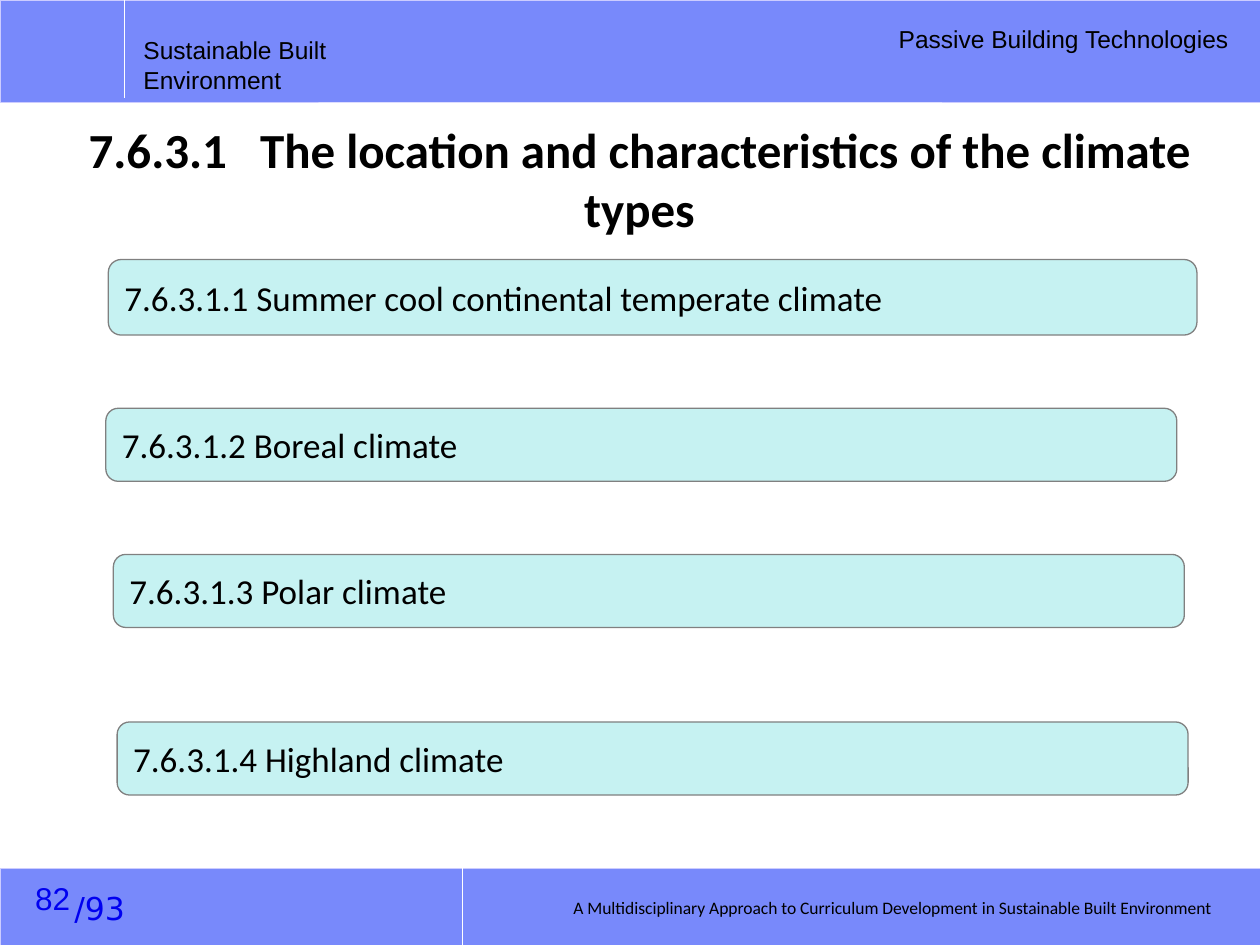
from dataclasses import dataclass

import lxml.etree
import pptx
import pptx.dml.color
import pptx.enum.shapes
import pptx.enum.text
import pptx.oxml.ns
import pptx.shapes.base
import pptx.slide
import pptx.text.text
import pptx.util

Inches = pptx.util.Inches
Pt = pptx.util.Pt
Align = pptx.enum.text.PP_ALIGN
Anchor = pptx.enum.text.MSO_ANCHOR
Preset = pptx.enum.shapes.MSO_SHAPE

COLORS = {
    "band": "7889FB",
    "band_edge": "CCCCFF",
    "divider": "FFFFFF",
    "topic": "C6F2F2",
    "topic_edge": "808080",
    "text": "000000",
    "page": "0000F0",
}


@dataclass(frozen=True)
class Box:
    left: float
    top: float
    width: float
    height: float

    def lengths(self) -> list[int]:
        return [Inches(v) for v in (self.left, self.top, self.width, self.height)]


@dataclass(frozen=True)
class Style:
    size: int
    font: str = "Calibri"
    color: str = "text"
    bold: bool = False
    align: Align = Align.LEFT
    anchor: Anchor = Anchor.TOP
    margin_right: float = 0.1


@dataclass(frozen=True)
class Label:
    words: str
    box: Box
    style: Style


@dataclass(frozen=True)
class Divider:
    x: float
    top: float
    bottom: float


BANDS = [Box(0, 6.89, 10, 0.61), Box(0, 0, 10, 0.81)]
DIVIDERS = [Divider(0.99, 0, 0.78), Divider(3.67, 6.88, 7.5)]
TOPIC_STYLE = Style(20, anchor=Anchor.MIDDLE)
TOPICS = [
    Label("7.6.3.1.1 Summer cool continental temperate climate", Box(0.86, 2.06, 8.64, 0.6), TOPIC_STYLE),
    Label("7.6.3.1.2 Boreal climate", Box(0.84, 3.24, 8.5, 0.58), TOPIC_STYLE),
    Label("7.6.3.1.3 Polar climate", Box(0.9, 4.4, 8.5, 0.58), TOPIC_STYLE),
    Label("7.6.3.1.4 Highland climate", Box(0.93, 5.73, 8.5, 0.58), TOPIC_STYLE),
]
TITLE = Label("7.6.3.1", Box(0.32, 0.9, 9.51, 1.04), Style(28, bold=True, align=Align.CENTER))
TITLE_WORDS = "The location and characteristics of the climate types"
TITLE_GAP = 1260
LABELS = [
    Label("Sustainable Built Environment", Box(1.04, 0.23, 2.79, 0.33), Style(14, "Arial", margin_right=0.8)),
    Label("Passive Building Technologies", Box(7, 0.14, 2.85, 0.43), Style(14, "Arial", align=Align.RIGHT)),
    Label("/93", Box(0.27, 7.01, 0.82, 0.4), Style(18, "DejaVu Sans", "page", align=Align.RIGHT)),
    Label(
        "A Multidisciplinary Approach to Curriculum Development in Sustainable Built Environment",
        Box(3.92, 7.07, 5.79, 0.27),
        Style(10, align=Align.RIGHT, anchor=Anchor.MIDDLE),
    ),
    Label("82", Box(0.18, 6.93, 2.33, 0.4), Style(18, "Arial", "page", anchor=Anchor.MIDDLE)),
]


def rgb(name: str) -> pptx.dml.color.RGBColor:
    return pptx.dml.color.RGBColor.from_string(COLORS[name])


def apply(target: object, values: dict[str, object]) -> None:
    for attribute, value in values.items():
        setattr(target, attribute, value)


def write(holder: pptx.shapes.base.BaseShape, label: Label) -> pptx.text.text._Paragraph:
    style = label.style
    frame = holder.text_frame
    apply(frame, {
        "word_wrap": True,
        "vertical_anchor": style.anchor,
        "margin_right": Inches(style.margin_right),
    })
    paragraph = frame.paragraphs[0]
    paragraph.alignment = style.align
    add_words(paragraph, label.words, style)
    return paragraph


def add_words(paragraph: pptx.text.text._Paragraph, words: str, style: Style) -> pptx.text.text._Run:
    run = paragraph.add_run()
    run.text = words
    apply(run.font, {"size": Pt(style.size), "name": style.font, "bold": style.bold})
    run.font.color.rgb = rgb(style.color)
    return run


def draw_panel(
    slide: pptx.slide.Slide, preset: Preset, box: Box, fill: str, edge: str, weight: float
) -> pptx.shapes.base.BaseShape:
    panel = slide.shapes.add_shape(preset, *box.lengths())
    panel.shadow.inherit = False
    panel.fill.solid()
    panel.fill.fore_color.rgb = rgb(fill)
    panel.line.color.rgb = rgb(edge)
    panel.line.width = Pt(weight)
    return panel


def draw_divider(slide: pptx.slide.Slide, divider: Divider) -> None:
    x = Inches(divider.x)
    rule = slide.shapes.add_connector(
        pptx.enum.shapes.MSO_CONNECTOR.STRAIGHT, x, Inches(divider.top), x, Inches(divider.bottom)
    )
    rule.line.color.rgb = rgb("divider")
    rule.line.width = Pt(0.75)
    lxml.etree.SubElement(rule._element.spPr, pptx.oxml.ns.qn("a:effectLst"))


def draw_label(slide: pptx.slide.Slide, label: Label) -> pptx.text.text._Paragraph:
    return write(slide.shapes.add_textbox(*label.box.lengths()), label)


def draw_title(slide: pptx.slide.Slide) -> None:
    heading = draw_label(slide, TITLE)
    gap = add_words(heading, " ", TITLE.style)
    gap._r.get_or_add_rPr().set("spc", str(TITLE_GAP))
    add_words(heading, TITLE_WORDS, TITLE.style)


def draw_topic(slide: pptx.slide.Slide, topic: Label) -> None:
    panel = draw_panel(slide, Preset.ROUNDED_RECTANGLE, topic.box, "topic", "topic_edge", 0.75)
    panel.adjustments[0] = 0.17
    write(panel, topic)


def main() -> None:
    deck = pptx.Presentation()
    apply(deck, {"slide_width": Inches(10), "slide_height": Inches(7.5)})
    slide = deck.slides.add_slide(deck.slide_layouts[6])
    for band in BANDS:
        draw_panel(slide, Preset.RECTANGLE, band, "band", "band_edge", 0.25)
    for divider in DIVIDERS:
        draw_divider(slide, divider)
    draw_title(slide)
    for topic in TOPICS:
        draw_topic(slide, topic)
    for label in LABELS:
        draw_label(slide, label)
    deck.save("out.pptx")


if __name__ == "__main__":
    main()
